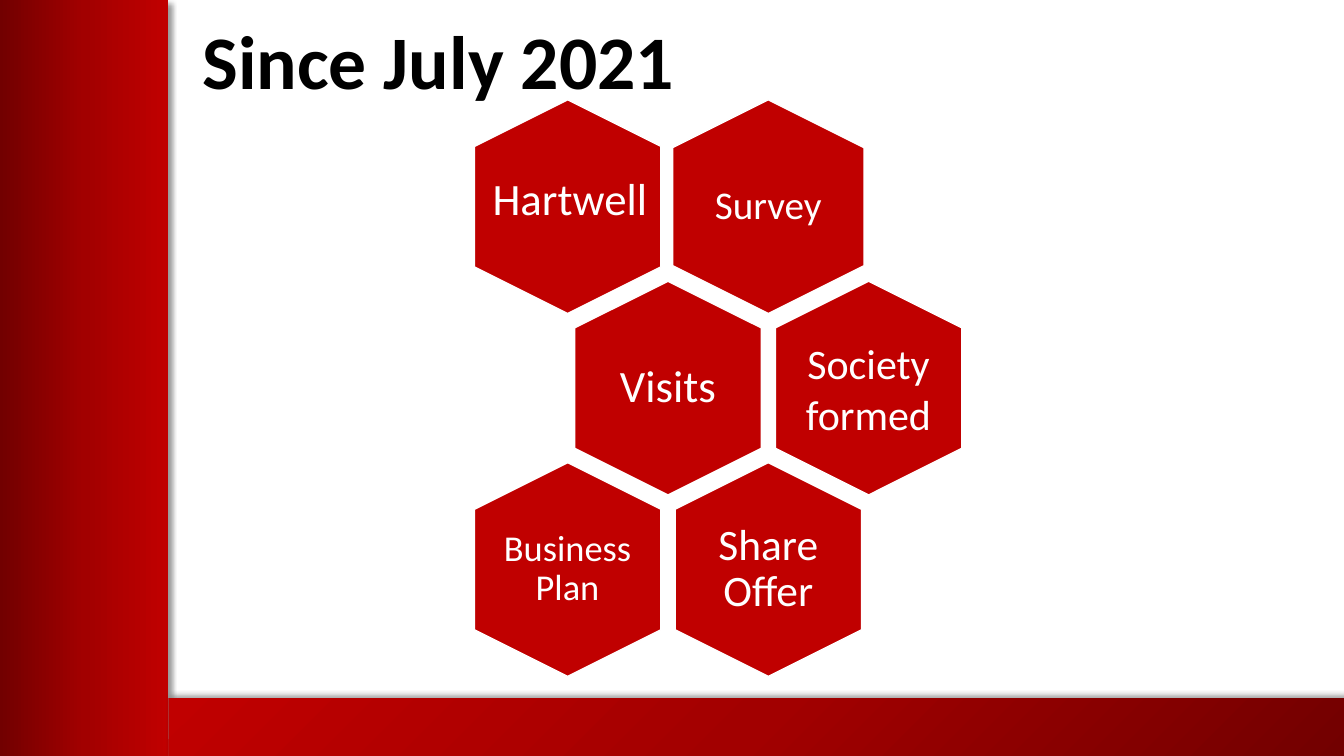
from lxml.etree import fromstring
from pptx import Presentation
from pptx.dml.color import RGBColor
from pptx.enum.shapes import MSO_SHAPE
from pptx.enum.text import MSO_ANCHOR, PP_ALIGN
from pptx.util import Inches, Pt

TITLE = "Since July 2021"
MILESTONES = [
    dict(lines=["Hartwell"], row=0, col=0, size=32, align=PP_ALIGN.RIGHT,
         text_width=2.06, dx=-0.11, dy=-0.06),
    dict(lines=["Survey"], row=0, col=1, size=28, hex_width=1.9,
         text_width=1.3, inset=0.12),
    dict(lines=["Visits"], row=1, col=0, size=32),
    dict(lines=["Society", "formed"], row=1, col=1, size=30, inset=0, spacing=1.0),
    dict(lines=["Business Plan"], row=2, col=0, size=26, inset=0),
    dict(lines=["Share Offer"], row=2, col=1, size=31),
]
LINEAR = '<a:lin ang="0" scaled="0"/>'
CORNER = '<a:path path="circle"><a:fillToRect l="100000" t="100000"/></a:path>'
BARS = [
    (0, 0, 1.67, 7.5, LINEAR, 45),
    (1.67, 6.93, 11.67, 0.57, CORNER, 315),
]

FONT = "Calibri"
BLACK = RGBColor(0, 0, 0)
WHITE = RGBColor(0xFF, 0xFF, 0xFF)
DARK_RED = RGBColor(0x72, 0, 0)
MID_RED = RGBColor(0xA2, 0, 0)
RED = RGBColor(0xC0, 0, 0)
NS = 'xmlns:a="http://schemas.openxmlformats.org/drawingml/2006/main"'

HEX_HEIGHT, HEX_WIDTH = 2.12, 1.85
FIRST_X, FIRST_Y = 5.63, 2.05
COL_STEP, ROW_STEP = 1.99, 1.8
TEXT_WIDTH, TEXT_HEIGHT = 1.27, 1.46


def add_bar(slide, left, top, width, height, shading, direction):
    s = slide.shapes.add_shape(MSO_SHAPE.RECTANGLE, Inches(left), Inches(top),
                               Inches(width), Inches(height))
    stops = "".join(
        f'<a:gs pos="{pos * 1000}"><a:srgbClr val="{color}"/></a:gs>'
        for pos, color in [(0, DARK_RED), (50, MID_RED), (100, RED)])
    sp_pr = s.element.spPr
    sp_pr.append(fromstring(
        f'<a:gradFill {NS} rotWithShape="1"><a:gsLst>{stops}</a:gsLst>{shading}</a:gradFill>'))
    s.line.fill.background()
    sp_pr.append(fromstring(
        f'<a:effectLst {NS}><a:outerShdw blurRad="{Pt(4)}" dist="{Pt(3)}" '
        f'dir="{direction * 60000}" algn="ctr" rotWithShape="0">'
        '<a:srgbClr val="000000"><a:alpha val="40000"/></a:srgbClr>'
        '</a:outerShdw></a:effectLst>'))


def add_hexagon(slide, x, y, width):
    s = slide.shapes.add_shape(MSO_SHAPE.HEXAGON, Inches(x - HEX_HEIGHT / 2),
                               Inches(y - width / 2), Inches(HEX_HEIGHT), Inches(width))
    s.rotation = 90
    s.shadow.inherit = False
    s.fill.solid()
    s.fill.fore_color.rgb = RED
    s.line.color.rgb = WHITE
    s.line.width = Pt(1)


def add_text(slide, lines, left, top, width, height, size, color=WHITE, bold=False,
             align=PP_ALIGN.CENTER, anchor=MSO_ANCHOR.MIDDLE, inset=0.13, spacing=0.9):
    tf = slide.shapes.add_textbox(Inches(left), Inches(top),
                                  Inches(width), Inches(height)).text_frame
    tf.word_wrap = True
    tf.vertical_anchor = anchor
    tf.margin_left = tf.margin_right = Inches(inset)
    tf.margin_top = tf.margin_bottom = Inches(inset / 2)
    for i, line in enumerate(lines):
        p = tf.paragraphs[0] if i == 0 else tf.add_paragraph()
        p.alignment = align
        p.line_spacing = spacing
        r = p.add_run()
        r.text = line
        r.font.name = FONT
        r.font.size = Pt(size)
        r.font.bold = bold
        r.font.color.rgb = color


def add_milestone(slide, lines, row, col, hex_width=HEX_WIDTH, text_width=TEXT_WIDTH,
                  dx=0, dy=0, **text_format):
    x = FIRST_X + col * COL_STEP + row % 2 * COL_STEP / 2
    y = FIRST_Y + row * ROW_STEP
    add_hexagon(slide, x, y, hex_width)
    add_text(slide, lines, x + dx - text_width / 2, y + dy - TEXT_HEIGHT / 2,
             text_width, TEXT_HEIGHT, **text_format)


def main():
    prs = Presentation()
    prs.slide_width, prs.slide_height = Inches(13.33), Inches(7.5)
    slide = prs.slides.add_slide(prs.slide_layouts[6])
    for bar in BARS:
        add_bar(slide, *bar)
    add_text(slide, [TITLE], 1.91, 0.19, 10.5, 1.64, size=54, color=BLACK, bold=True,
             align=PP_ALIGN.LEFT, anchor=MSO_ANCHOR.TOP, inset=0.1)
    for milestone in MILESTONES:
        add_milestone(slide, **milestone)
    prs.save("out.pptx")


if __name__ == "__main__":
    main()
